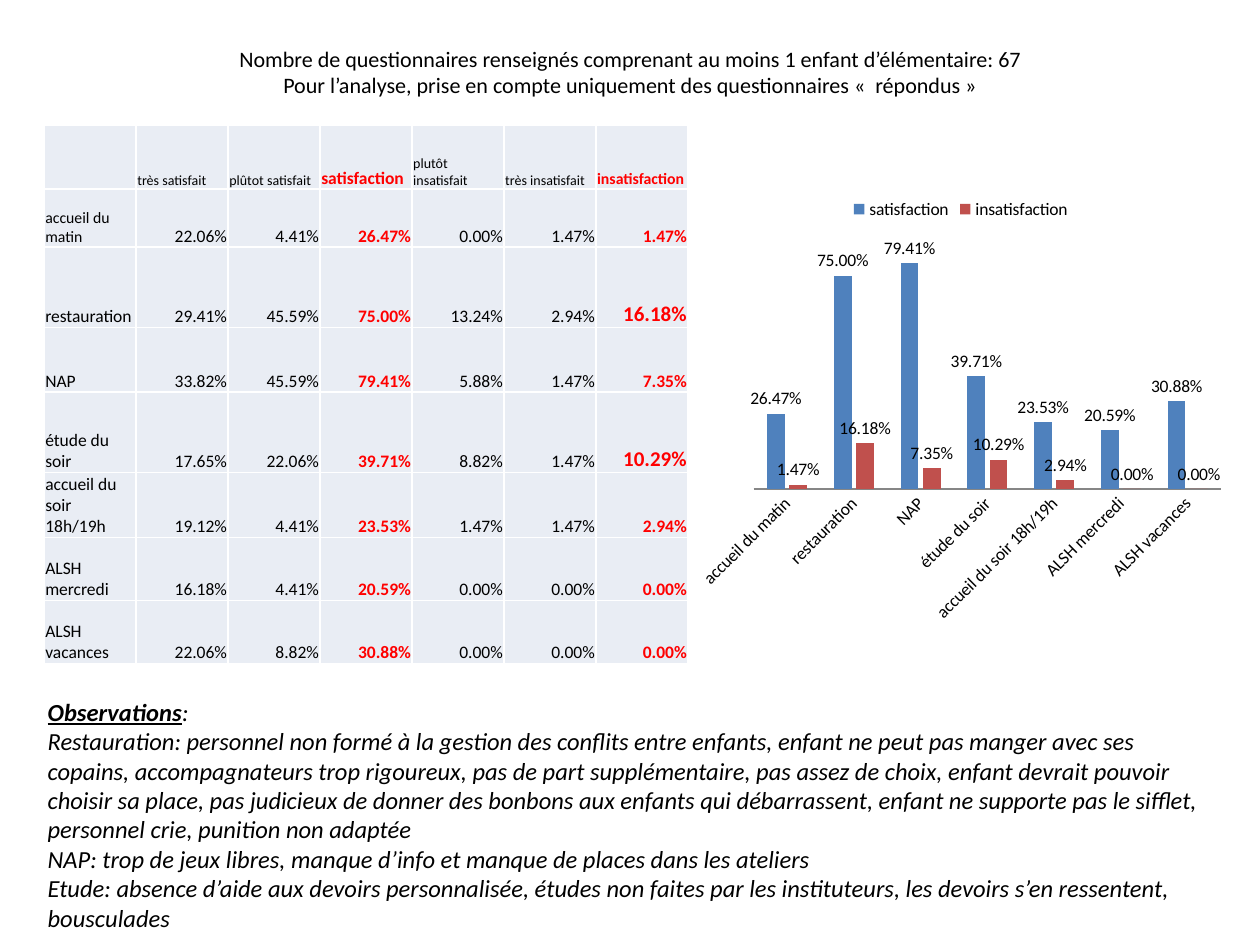
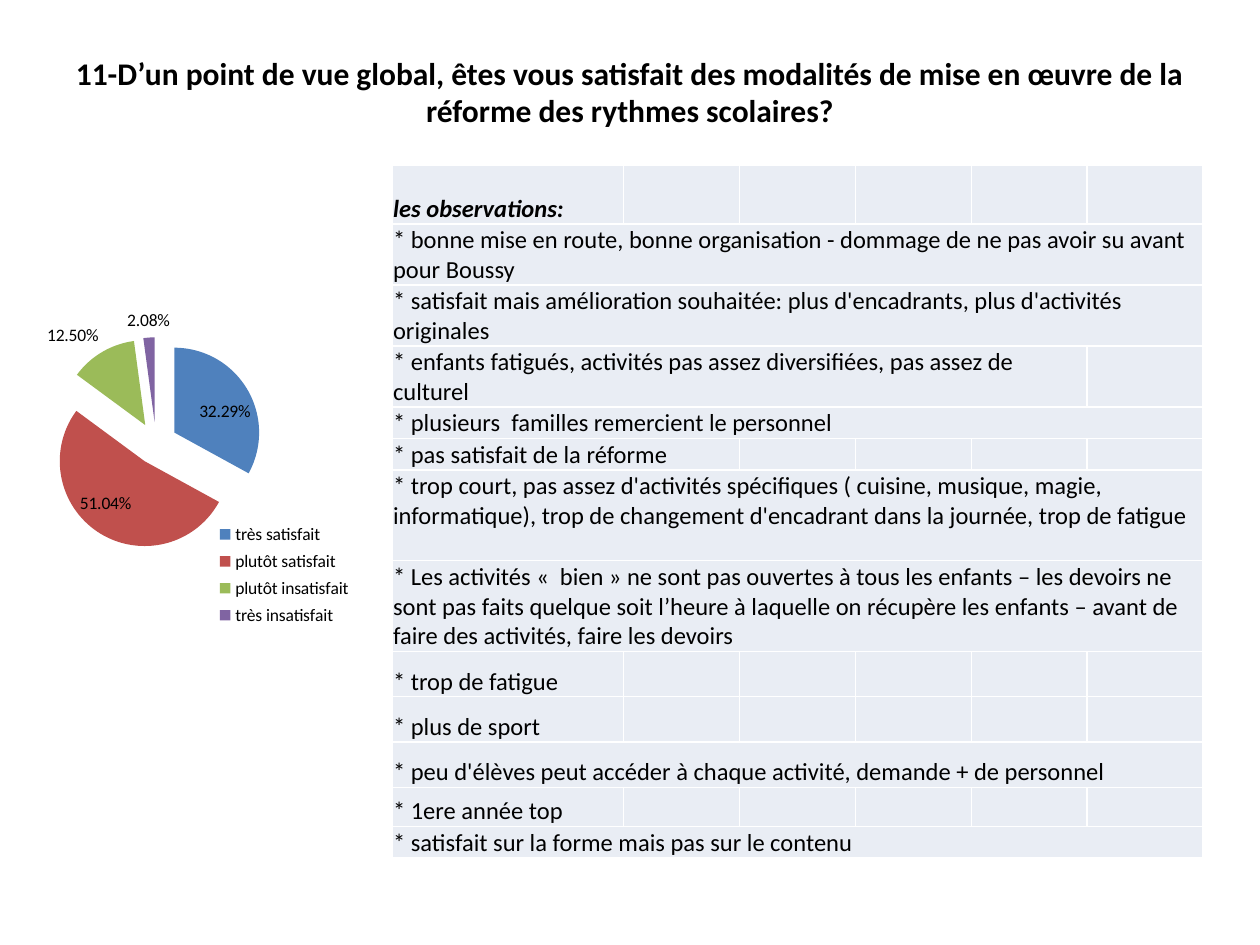
from lxml import etree
from pptx import Presentation
from pptx import util as u
from pptx.chart import data as chart_data
from pptx.dml.color import RGBColor
from pptx.enum import chart as ch
from pptx.enum import text
from pptx.oxml import ns

COLORS = {
    "ink": "000000", "accent": "FF0000", "cell": "E9EDF4", "border": "FFFFFF",
    "blue": "4F81BD", "red": "C0504D", "green": "9BBB59", "purple": "8064A2",
    "axis": "868686",
}
FONT = "Calibri"
PERCENT = "0.00%"
RIGHT = text.PP_ALIGN.RIGHT


def rgb(name):
    return RGBColor.from_string(COLORS[name])


def box(*lengths):
    return [u.Inches(length) for length in lengths]


class Deck:
    """Holds the presentation, its shared style and the current slide."""

    def __init__(self):
        self.prs = Presentation()
        self.prs.slide_width, self.prs.slide_height = box(10, 7.5)
        self.slide = None

    def style(self, font, size, color="ink", bold=False, italic=False):
        font.name, font.size = FONT, u.Pt(size)
        font.bold, font.italic = bold, italic
        font.color.rgb = rgb(color)

    def titled_slide(self, wording, height, size, bold=False):
        self.slide = self.prs.slides.add_slide(self.prs.slide_layouts[5])
        title = self.slide.shapes.title
        title.left, title.top, title.width, title.height = box(0.5, 0.3, 9, height)
        title.text_frame.text = wording
        title.text_frame.vertical_anchor = text.MSO_ANCHOR.MIDDLE
        for paragraph in title.text_frame.paragraphs:
            paragraph.alignment = text.PP_ALIGN.CENTER
            self.style(paragraph.font, size, bold=bold)

    def observations(self, place, heading, remarks, size):
        frame = self.slide.shapes.add_textbox(*box(*place)).text_frame
        frame.word_wrap = True
        frame.auto_size = text.MSO_AUTO_SIZE.SHAPE_TO_FIT_TEXT
        first = frame.paragraphs[0]
        label = first.add_run()
        label.text = heading
        label.font.bold = label.font.underline = True
        first.add_run().text = ":"
        for remark in remarks:
            frame.add_paragraph().text = remark
        for paragraph in frame.paragraphs:
            self.style(paragraph.font, size, italic=True)

    def table(self, place, widths, heights):
        left, top = place
        frame = self.slide.shapes.add_table(
            len(heights), len(widths), *box(left, top, sum(widths), sum(heights)))
        grid = frame.table
        grid.first_row = grid.horz_banding = False
        for column, width in zip(grid.columns, widths):
            column.width = u.Inches(width)
        for row, height in zip(grid.rows, heights):
            row.height = u.Inches(height)
        for cell in grid.iter_cells():
            self.cell(cell, "", 8)
        return grid

    def cell(self, cell, wording, size, align=None, **look):
        cell.text = wording
        cell.margin_left = cell.margin_right = cell.margin_top = u.Inches(0.01)
        cell.margin_bottom = 0
        cell.vertical_anchor = text.MSO_ANCHOR.BOTTOM
        paragraph = cell.text_frame.paragraphs[0]
        paragraph.alignment = align
        self.style(paragraph.font, size, **look)
        cell.fill.solid()
        cell.fill.fore_color.rgb = rgb("cell")
        properties = cell._tc.get_or_add_tcPr()
        for position, side in enumerate(("lnL", "lnR", "lnT", "lnB")):
            for old in properties.findall(ns.qn(f"a:{side}")):
                properties.remove(old)
            line = etree.Element(ns.qn(f"a:{side}"), w=str(u.Pt(1)))
            fill = etree.SubElement(line, ns.qn("a:solidFill"))
            etree.SubElement(fill, ns.qn("a:srgbClr"), val=COLORS["border"])
            properties.insert(position, line)

    def chart(self, kind, place, categories, series, legend):
        source = chart_data.CategoryChartData(number_format=PERCENT)
        source.categories = categories
        for name, values in series.items():
            source.add_series(name, values)
        chart = self.slide.shapes.add_chart(kind, *box(*place), source).chart
        chart.has_title = False
        self.style(chart.font, 10)
        chart.has_legend = True
        chart.legend.position = legend
        chart.legend.include_in_layout = False
        plot = chart.plots[0]
        plot.has_data_labels = True
        plot.data_labels.show_value = True
        plot.data_labels.number_format = PERCENT
        plot.data_labels.number_format_is_linked = False
        return chart

    def columns(self, place, categories, series, colors):
        chart = self.chart(ch.XL_CHART_TYPE.COLUMN_CLUSTERED, place, categories,
                           series, ch.XL_LEGEND_POSITION.TOP)
        plot = chart.plots[0]
        plot.vary_by_categories = False
        plot.gap_width, plot.overlap = 150, -25
        plot.data_labels.position = ch.XL_LABEL_POSITION.OUTSIDE_END
        for bars, color in zip(plot.series, colors):
            bars.format.fill.solid()
            bars.format.fill.fore_color.rgb = rgb(color)
        chart.value_axis.visible = False
        chart.value_axis.has_major_gridlines = False
        chart.category_axis.major_tick_mark = ch.XL_TICK_MARK.NONE
        chart.category_axis.format.line.color.rgb = rgb("axis")

    def pie(self, place, categories, series, colors, pie_area, legend_area):
        chart = self.chart(ch.XL_CHART_TYPE.PIE, place, categories, series,
                           ch.XL_LEGEND_POSITION.RIGHT)
        plot = chart.plots[0]
        plot.vary_by_categories = True
        plot.data_labels.position = ch.XL_LABEL_POSITION.BEST_FIT
        slices = plot.series[0]
        explosion = etree.Element(ns.qn("c:explosion"), val="25")
        slices._element.find(ns.qn("c:tx")).addnext(explosion)
        for index, color in enumerate(colors):
            fill = slices.points[index].format.fill
            fill.solid()
            fill.fore_color.rgb = rgb(color)
        plot_area = chart._chartSpace.chart.plotArea
        self.arrange(plot_area, pie_area, 0)
        self.arrange(chart.legend._element, legend_area, 1)

    def arrange(self, part, area, position):
        for old in part.findall(ns.qn("c:layout")):
            part.remove(old)
        layout = etree.Element(ns.qn("c:layout"))
        manual = etree.SubElement(layout, ns.qn("c:manualLayout"))
        if position == 0:
            etree.SubElement(manual, ns.qn("c:layoutTarget"), val="inner")
        for mode in ("xMode", "yMode"):
            etree.SubElement(manual, ns.qn(f"c:{mode}"), val="edge")
        for key, value in zip("xywh", area):
            etree.SubElement(manual, ns.qn(f"c:{key}"), val=str(value))
        part.insert(position, layout)


HEADERS = [
    ("", 8), ("très satisfait", 8), ("plûtot satisfait", 8), ("satisfaction", 10),
    ("plutôt insatisfait", 8), ("très insatisfait", 8), ("insatisfaction", 9),
]
TOTALS = (3, 6)
ANSWERS = {
    "accueil du matin": (0.2206, 0.0441, 0, 0.0147),
    "restauration": (0.2941, 0.4559, 0.1324, 0.0294),
    "NAP": (0.3382, 0.4559, 0.0588, 0.0147),
    "étude du soir": (0.1765, 0.2206, 0.0882, 0.0147),
    "accueil du soir 18h/19h": (0.1912, 0.0441, 0.0147, 0.0147),
    "ALSH mercredi": (0.1618, 0.0441, 0, 0),
    "ALSH vacances": (0.2206, 0.0882, 0, 0),
}
REMARKS = [
    "Restauration: personnel non formé à la gestion des conflits entre enfants, enfant ne peut pas manger avec ses copains, accompagnateurs trop rigoureux, pas de part supplémentaire, pas assez de choix, enfant devrait pouvoir choisir sa place, pas judicieux de donner des bonbons aux enfants qui débarrassent, enfant ne supporte pas le sifflet, personnel crie, punition non adaptée",
    "NAP: trop de jeux libres, manque d’info et manque de places dans les ateliers",
    "Etude: absence d’aide aux devoirs personnalisée, études non faites par les instituteurs, les devoirs s’en ressentent, bousculades",
]
COMMENTS = [
    ("les observations:", 1, 0.47),
    ("* bonne mise en route, bonne organisation - dommage de ne pas avoir su avant pour Boussy", 6, 0.48),
    ("* satisfait mais amélioration souhaitée: plus d'encadrants, plus d'activités originales", 6, 0.48),
    ("* enfants fatigués, activités pas assez diversifiées, pas assez de culturel", 5, 0.48),
    ("* plusieurs  familles remercient le personnel", 6, 0.25),
    ("* pas satisfait de la réforme", 2, 0.25),
    ("* trop court, pas assez d'activités spécifiques ( cuisine, musique, magie, informatique), trop de changement d'encadrant dans la journée, trop de fatigue", 6, 0.72),
    ("* Les activités «  bien » ne sont pas ouvertes à tous les enfants – les devoirs ne sont pas faits quelque soit l’heure à laquelle on récupère les enfants – avant de faire des activités, faire les devoirs", 6, 0.72),
    ("* trop de fatigue", 1, 0.36),
    ("* plus de sport", 1, 0.36),
    ("* peu d'élèves peut accéder à chaque activité, demande + de personnel", 6, 0.36),
    ("* 1ere année top", 1, 0.31),
    ("* satisfait sur la forme mais pas sur le contenu", 6, 0.24),
]


def satisfaction_slide(deck):
    deck.titled_slide(
        "Nombre de questionnaires renseignés comprenant au moins 1 enfant d’élémentaire: 67\v"
        "Pour l’analyse, prise en compte uniquement des questionnaires «  répondus »",
        0.54, 12.6)
    grid = deck.table((0.35, 0.99), [0.73] * 7,
                      [0.51, 0.46, 0.64, 0.51, 0.64, 0.51, 0.5, 0.5])
    for column, (header, size) in enumerate(HEADERS):
        total = column in TOTALS
        deck.cell(grid.cell(0, column), header, size,
                  color="accent" if total else "ink", bold=total)
    satisfied, dissatisfied = [], []
    for row, (service, (very, rather, rather_not, not_at_all)) in enumerate(ANSWERS.items(), 1):
        satisfied.append(round(very + rather, 4))
        dissatisfied.append(round(rather_not + not_at_all, 4))
        shares = (very, rather, satisfied[-1], rather_not, not_at_all, dissatisfied[-1])
        deck.cell(grid.cell(row, 0), service, 9 if row == 1 else 10)
        for column, share in enumerate(shares, 1):
            total = column in TOTALS
            alarming = column == TOTALS[1] and share > 0.1
            deck.cell(grid.cell(row, column), f"{share:.2%}", 12 if alarming else 10,
                      RIGHT, color="accent" if total else "ink", bold=total)
    deck.columns((5.47, 1.47, 4.31, 3.54), list(ANSWERS),
                 {"satisfaction": satisfied, "insatisfaction": dissatisfied},
                 ("blue", "red"))
    deck.observations((0.28, 5.48, 9.37, 1.99), "Observations", REMARKS, 14)


def global_view_slide(deck):
    deck.titled_slide(
        "11-D’un point de vue global, êtes vous satisfait des modalités de mise en œuvre de la réforme des rythmes scolaires?",
        0.85, 18, bold=True)
    deck.pie((0.12, 1.47, 3.39, 3.66),
             ["très satisfait", "plutôt satisfait", "plutôt insatisfait", "très insatisfait"],
             {"Series 1": (0.3229, 0.5104, 0.125, 0.0208)},
             ("blue", "red", "green", "purple"),
             (0.08, 0.33, 0.5, 0.46), (0.46, 0.72, 0.34, 0.25))
    grid = deck.table((3.11, 1.31), [1.84] + [0.92] * 5,
                      [height for _, _, height in COMMENTS])
    for row, (comment, span, _) in enumerate(COMMENTS):
        start = grid.cell(row, 0)
        if span > 1:
            start.merge(grid.cell(row, span - 1))
        heading = row == 0
        deck.cell(start, comment, 14, bold=heading, italic=heading)
    grid.cell(6, 0).vertical_anchor = text.MSO_ANCHOR.TOP


def main():
    deck = Deck()
    satisfaction_slide(deck)
    global_view_slide(deck)
    deck.prs.save("out.pptx")


if __name__ == "__main__":
    main()
